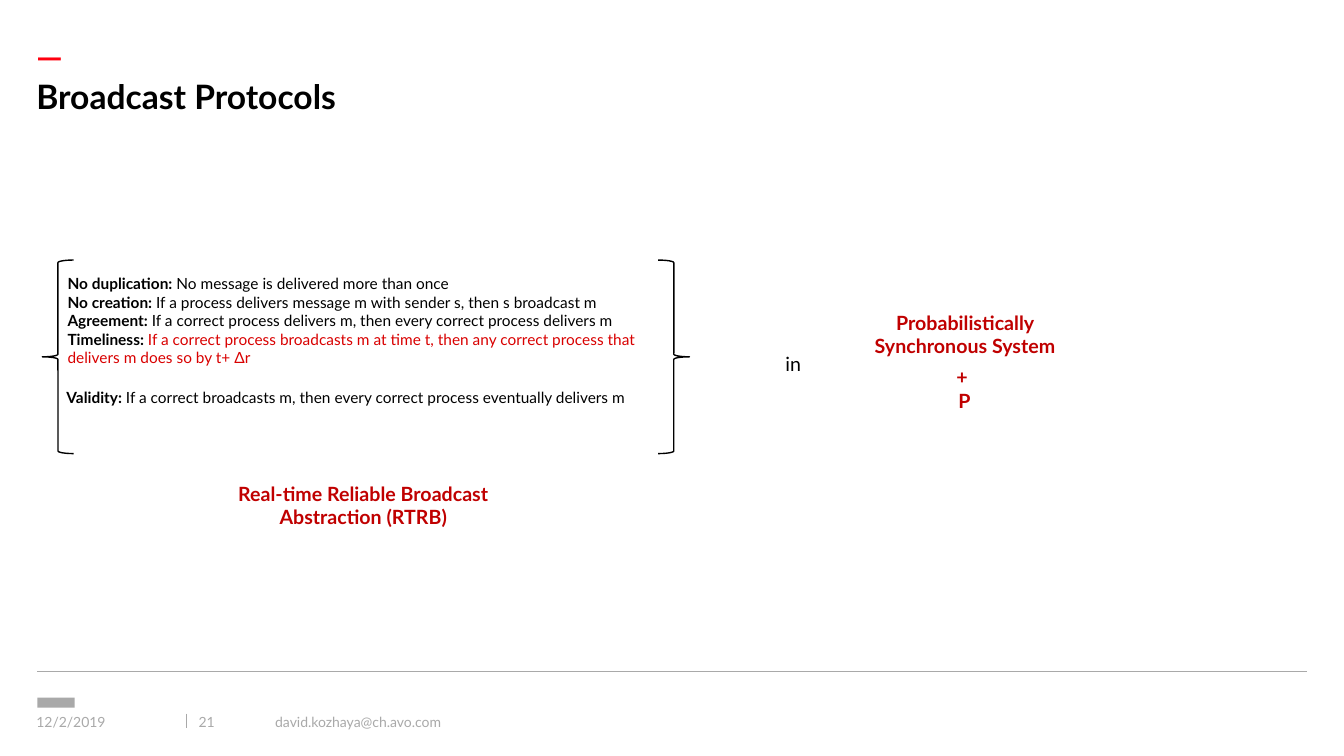
"""Build the Broadcast Protocols slide."""
from lxml import etree
from pptx import Presentation
from pptx.dml.color import RGBColor
from pptx.enum import shapes, text
from pptx.oxml import ns
from pptx.util import Pt

BLACK = RGBColor(0x00, 0x00, 0x00)
GREY = RGBColor(0xA9, 0xA9, 0xA9)
ACCENT = RGBColor(0xFF, 0x00, 0x0F)
RED = RGBColor(0xD9, 0x00, 0x00)
DARK_RED = RGBColor(0xC0, 0x00, 0x00)
FONT = "Lato"
LEFT, CENTER = text.PP_ALIGN.LEFT, text.PP_ALIGN.CENTER
TOP, MIDDLE = text.MSO_ANCHOR.TOP, text.MSO_ANCHOR.MIDDLE
PAD = 5.76

TITLE = "Broadcast Protocols"
PROPERTIES = [
    ("No duplication: ", "No message is delivered more than once", BLACK),
    ("No creation: ", "If a process delivers message m with sender s, then s broadcast m", BLACK),
    ("Agreement: ", "If a correct process delivers m, then every correct process delivers m", BLACK),
    ("Timeliness: ", "If a correct process broadcasts m at time t, then any correct process "
     "that delivers m does so by t+ Δr", RED),
]
VALIDITY = [("Validity: ", "If a correct broadcasts m, then every correct process "
             "eventually delivers m", BLACK)]
LABELS = [
    (["Real-time Reliable Broadcast Abstraction (RTRB)"], (152.64, 338.4, 213.84, 29.5), DARK_RED, True),
    (["Probabilistically Synchronous System"], (612.72, 216, 153.36, 29.5), DARK_RED, True),
    (["in"], (496.8, 245.5, 139.68, 29.5), BLACK, False),
    (["+", " P"], (612.72, 254.9, 149.04, 29.5), DARK_RED, True),
]
FOOTER = [
    ("12/2/2019", (26, 511.2, 91.44, 9.36)),
    ("21", (141.84, 511.2, 53.28, 9.36)),
    ("david.kozhaya@ch.avo.com", (196.56, 496.08, 668.88, 39.6)),
]
RULES = [(26.64, 479.5, 933.84, 479.5), (133.2, 509.76, 133.2, 519.84)]
BRACES = [(shapes.MSO_SHAPE.LEFT_BRACE, 30.24), (shapes.MSO_SHAPE.RIGHT_BRACE, 470.16)]
BRACE_TOP, BRACE_W, BRACE_H = 185.76, 22.32, 138.24


def points(box):
    return [Pt(v) for v in box]


def write(sp, paras, size=10, color=BLACK, bold=False, align=LEFT, anchor=TOP, pad=0):
    """Fill a shape with paragraphs, each a list of (text, color, bold) or plain text."""
    tf = sp.text_frame
    tf.word_wrap = True
    tf.auto_size = text.MSO_AUTO_SIZE.NONE
    tf.vertical_anchor = anchor
    tf.margin_left = tf.margin_right = tf.margin_top = tf.margin_bottom = Pt(pad)
    for i, runs in enumerate(paras):
        p = tf.add_paragraph() if i else tf.paragraphs[0]
        p.alignment = align
        p.space_before = Pt(0)
        pPr = p._p.get_or_add_pPr()
        pPr.set("marL", "0")
        pPr.set("indent", "0")
        etree.SubElement(pPr, ns.qn("a:buNone"))
        for words, tint, heavy in [(runs, color, bold)] if isinstance(runs, str) else runs:
            r = p.add_run()
            r.text = words
            r.font.name, r.font.size, r.font.bold = FONT, Pt(size), heavy
            r.font.color.rgb = tint


def place(sp, box):
    sp.left, sp.top, sp.width, sp.height = points(box)
    return sp


def defined(entries):
    return [[(term, BLACK, True), (meaning, tint, False)] for term, meaning, tint in entries]


def main():
    prs = Presentation()
    prs.slide_width, prs.slide_height = Pt(960), Pt(540)
    s = prs.slides.add_slide(prs.slide_layouts[1])

    for x1, y1, x2, y2 in RULES:
        rule = s.shapes.add_connector(shapes.MSO_CONNECTOR.STRAIGHT, *points((x1, y1, x2, y2)))
        rule.line.color.rgb, rule.line.width = GREY, Pt(1)
        etree.SubElement(rule._element.spPr, ns.qn("a:effectLst"))

    mark = s.shapes.add_shape(shapes.MSO_SHAPE.RECTANGLE, *points((26.64, 498.24, 26.64, 7.2)))
    mark.shadow.inherit = False
    mark.fill.solid()
    mark.fill.fore_color.rgb = GREY
    mark.line.fill.background()

    for shape, left in BRACES:
        brace = s.shapes.add_shape(shape, *points((left, BRACE_TOP, BRACE_W, BRACE_H)))
        brace.shadow.inherit = False
        brace.fill.background()
        brace.line.color.rgb, brace.line.width = BLACK, Pt(1)

    write(place(s.shapes.title, (26, 54, 907.2, 30.96)), [TITLE], size=24, bold=True)
    write(place(s.placeholders[1], (42.48, 190.08, 433.44, 55.44)), defined(PROPERTIES),
          size=11, pad=PAD)
    validity = s.shapes.add_textbox(*points((41.76, 271.44, 449.28, 29.5)))
    write(validity, defined(VALIDITY), size=11, pad=PAD)
    dash = s.shapes.add_textbox(*points((18.72, 33.84, 43.2, 12.24)))
    write(dash, ["—"], size=24, color=ACCENT, bold=True, anchor=MIDDLE, pad=7.2)

    for paras, box, color, bold in LABELS:
        write(s.shapes.add_textbox(*points(box)), paras, size=14, color=color,
              bold=bold, align=CENTER, pad=PAD)
    for words, box in FOOTER:
        write(s.shapes.add_textbox(*points(box)), [words], color=GREY, anchor=MIDDLE)

    prs.save("out.pptx")


if __name__ == "__main__":
    main()
